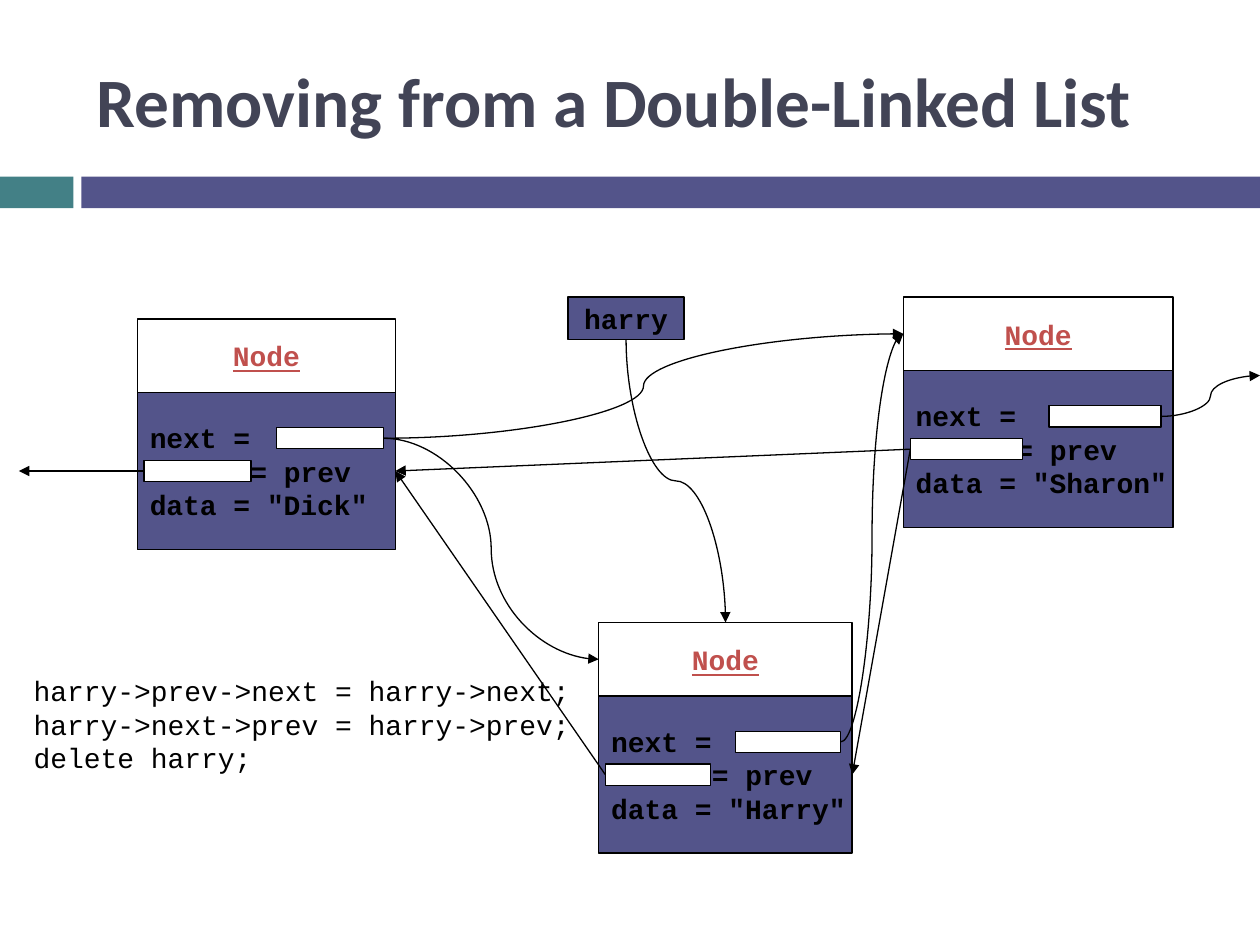
from collections import namedtuple

from lxml import etree
from pptx import Presentation
from pptx.dml.color import RGBColor
from pptx.enum.shapes import MSO_CONNECTOR as Route, MSO_SHAPE as Preset
from pptx.enum.text import MSO_ANCHOR as Anchor, PP_ALIGN as Align
from pptx.oxml.ns import qn
from pptx.util import Cm, Pt

COLORS = {
    "teal": "438086", "indigo": "53548A", "title": "424456",
    "red": "C0504D", "black": "000000", "white": "FFFFFF",
}
TOP, LEFT, BOTTOM, RIGHT = range(4)
HEADER_HEIGHT, BODY_HEIGHT, SLOT_HEIGHT = 1.48, 3.17, 0.43
PREV_INDENT = Cm(2.03)

Node = namedtuple("Node", "header body next_slot prev_slot")


def rgb(name):
    return RGBColor.from_string(COLORS[name])


def add_box(slide, left, top, width, height, fill=None, outline="black"):
    box = slide.shapes.add_shape(Preset.RECTANGLE, Cm(left), Cm(top), Cm(width), Cm(height))
    box.shadow.inherit = False
    if fill:
        box.fill.solid()
        box.fill.fore_color.rgb = rgb(fill)
    else:
        box.fill.background()
    if outline:
        box.line.color.rgb = rgb(outline)
        box.line.width = Pt(0.75)
    else:
        box.line.fill.background()
    return box


def write(shape, lines, color="black", size=16, font="Courier New", bold=True,
          underline=False, align=Align.LEFT, wrap=False):
    frame = shape.text_frame
    frame.word_wrap = wrap
    frame.vertical_anchor = Anchor.MIDDLE
    for number, line in enumerate(lines):
        paragraph = frame.add_paragraph() if number else frame.paragraphs[0]
        paragraph.alignment = align
        run = paragraph.add_run()
        run.text = line
        run.font.name = font
        run.font.size = Pt(size)
        run.font.bold = bold
        run.font.underline = underline
        run.font.color.rgb = rgb(color)
    return frame


def add_text(slide, left, top, width, height, lines, **style):
    text = slide.shapes.add_textbox(Cm(left), Cm(top), Cm(width), Cm(height))
    write(text, lines, wrap=True, **style)


def add_node(slide, left, top, width, person):
    """Draw a list node: header, fields, and white slots for both pointers."""
    body_top = top + HEADER_HEIGHT
    body = add_box(slide, left, body_top, width, BODY_HEIGHT, "indigo")
    fields = write(body, ["next =", "= prev", f'data = "{person}"'])
    fields.paragraphs[1]._p.get_or_add_pPr().set("marL", str(PREV_INDENT))
    header = add_box(slide, left, top, width, HEADER_HEIGHT)
    write(header, ["Node"], "red", underline=True, align=Align.CENTER)
    next_slot, prev_slot = (
        add_box(slide, left + share * width, body_top + drop, 0.415 * width, SLOT_HEIGHT, "white")
        for share, drop in ((0.54, 0.71), (0.026, 1.37)))
    return Node(header, body, next_slot, prev_slot)


def side(shape, site):
    """Return the middle of one side of a rectangle."""
    across, down = ((0.5, 0), (0, 0.5), (0.5, 1), (1, 0.5))[site]
    return (int(shape.left + across * shape.width), int(shape.top + down * shape.height))


def add_arrow(slide, route, start, end):
    arrow = slide.shapes.add_connector(route, *start, *end)
    arrow.line.color.rgb = rgb("black")
    arrow.line.width = Pt(0.75)
    etree.SubElement(arrow.line._get_or_add_ln(), qn("a:tailEnd"), type="triangle")
    etree.SubElement(arrow._element.spPr, qn("a:effectLst"))
    return arrow


def join(slide, source, source_site, target, target_site):
    arrow = add_arrow(slide, Route.STRAIGHT, side(source, source_site), side(target, target_site))
    arrow.begin_connect(source, source_site)
    arrow.end_connect(target, target_site)


def add_falling_curve(slide, start, end):
    """Draw a curve that leaves and arrives vertically: a curve turned by 270 degrees."""
    (x1, y1), (x2, y2) = start, end
    middle_x, middle_y = (x1 + x2) // 2, (y1 + y2) // 2
    half_width, half_height = (x2 - x1) // 2, (y2 - y1) // 2
    curve = add_arrow(slide, Route.CURVE,
                      (middle_x + half_height, middle_y - half_width),
                      (middle_x - half_height, middle_y + half_width))
    curve._element.spPr.find(qn("a:xfrm")).set("rot", str(270 * 60000))


def main():
    prs = Presentation()
    prs.slide_width, prs.slide_height = Cm(25.4), Cm(19.05)
    slide = prs.slides.add_slide(prs.slide_layouts[6])

    add_box(slide, 0, 3.56, 1.48, 0.64, "teal", None)
    add_box(slide, 1.64, 3.56, 23.76, 0.64, "indigo", None)
    add_text(slide, 1.7, 0.64, 22.66, 2.74, ["Removing from a Double-Linked List"],
             color="title", size=39.6, font="Calibri")

    dick = add_node(slide, 2.77, 6.43, 5.2, "Dick")
    harry = add_node(slide, 12.07, 12.55, 5.11, "Harry")
    sharon = add_node(slide, 18.21, 5.99, 5.44, "Sharon")
    pointer = add_box(slide, 11.45, 5.99, 2.34, 0.85, "indigo")
    write(pointer, ["harry"], align=Align.CENTER)

    add_text(slide, 0.43, 12.27, 12.19, 4.65, [
        "harry->prev->next = harry->next;",
        "harry->next->prev = harry->prev;",
        "delete harry;",
    ], bold=False)

    for source, target in ((dick, harry), (harry, sharon), (dick, sharon)):
        add_arrow(slide, Route.CURVE, side(source.next_slot, RIGHT), side(target.header, LEFT))
    add_arrow(slide, Route.CURVE, side(sharon.next_slot, RIGHT), (Cm(25.4), Cm(7.57)))
    add_falling_curve(slide, side(pointer, BOTTOM), side(harry.header, TOP))

    for source, target in ((harry, dick), (sharon, harry), (sharon, dick)):
        join(slide, source.prev_slot, LEFT, target.body, RIGHT)
    list_start = side(dick.prev_slot, LEFT)
    to_previous = add_arrow(slide, Route.STRAIGHT, list_start, (Cm(0.38), list_start[1]))
    to_previous.begin_connect(dick.prev_slot, LEFT)

    prs.save("out.pptx")


if __name__ == "__main__":
    main()
